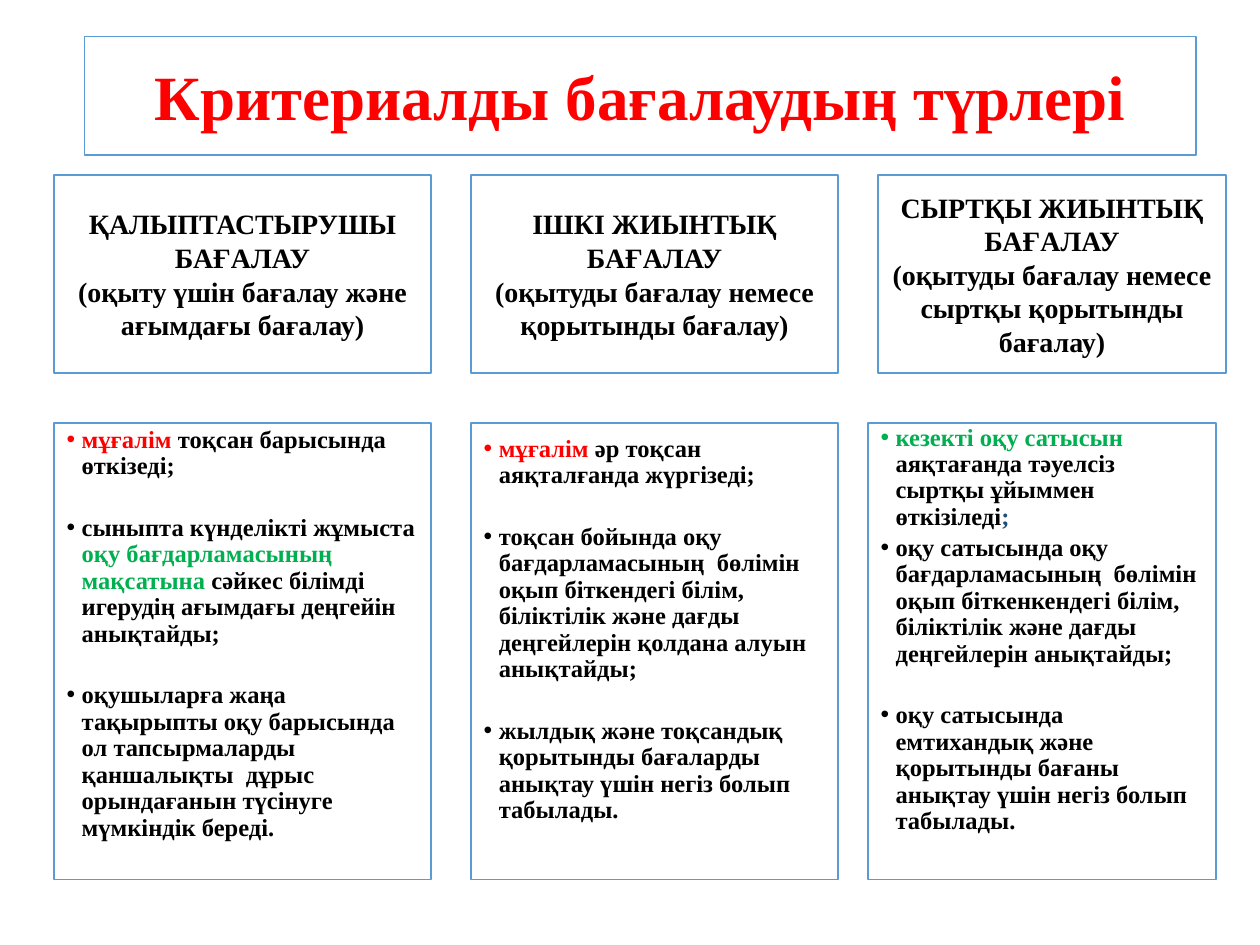
import pptx
import pptx.util
import pptx.oxml
import pptx.oxml.ns
import pptx.dml.color
import pptx.enum.shapes
import pptx.enum.text

Inches = pptx.util.Inches
Pt = pptx.util.Pt
ALIGN = pptx.enum.text.PP_ALIGN
SHAPE = pptx.enum.shapes.MSO_SHAPE

COLORS = {
    "white": "FFFFFF",
    "border": "5B9BD5",
    "text": "000000",
    "red": "FF0000",
    "green": "00B050",
    "navy": "1F4E79",
}
FONT = "Times New Roman"
WIDE_GAP, NARROW_GAP = 20, 2.5  # points after a list item

HEAD_TOP, HEAD_HEIGHT = 1.39, 1.57
LIST_TOP, LIST_HEIGHT = 3.36, 3.62

# Each column: head left, list left, width, room below the list, head, items.
# Each item: gap after it and its (text, colour) spans.
COLUMNS = [
    (0.43, 0.43, 2.99, 0.32,
     ["ҚАЛЫПТАСТЫРУШЫ БАҒАЛАУ", "(оқыту үшін бағалау және ағымдағы бағалау)"],
     [(WIDE_GAP, [("мұғалім ", "red"), ("тоқсан барысында өткізеді;", "text")]),
      (WIDE_GAP, [("сыныпта күнделікті жұмыста ", "text"),
                  ("оқу бағдарламасының мақсатына ", "green"),
                  ("сәйкес білімді игерудің ағымдағы деңгейін анықтайды;", "text")]),
      (0, [("оқушыларға жаңа тақырыпты оқу барысында ол тапсырмаларды "
            "қаншалықты  дұрыс орындағанын түсінуге мүмкіндік береді.", "text")])]),
    (3.74, 3.74, 2.91, 0.39,
     ["ІШКІ ЖИЫНТЫҚ БАҒАЛАУ", "(оқытуды бағалау немесе қорытынды бағалау)"],
     [(WIDE_GAP, [("мұғалім", "red"), (" әр тоқсан аяқталғанда жүргізеді;", "text")]),
      (WIDE_GAP, [("тоқсан бойында оқу бағдарламасының  бөлімін  оқып біткендегі "
                   "білім, біліктілік және дағды деңгейлерін қолдана алуын "
                   "анықтайды;", "text")]),
      (0, [("жылдық және тоқсандық қорытынды бағаларды анықтау үшін негіз "
            "болып табылады.", "text")])]),
    (6.97, 6.89, 2.76, 0.39,
     ["СЫРТҚЫ ЖИЫНТЫҚ БАҒАЛАУ",
      "(оқытуды бағалау немесе сыртқы қорытынды бағалау)"],
     [(NARROW_GAP, [("кезекті оқу сатысын ", "green"),
                    ("аяқтағанда тәуелсіз сыртқы ұйыммен өткізіледі", "text"),
                    (";", "navy")]),
      (WIDE_GAP, [("оқу сатысында оқу бағдарламасының  бөлімін оқып біткенкендегі "
                   "білім, біліктілік және дағды деңгейлерін анықтайды;", "text")]),
      (0, [("оқу сатысында емтихандық және қорытынды бағаны анықтау үшін негіз "
            "болып табылады.", "text")])]),
]


class PageBuilder:
    """Holds the style and the current slide."""

    def __init__(self, deck):
        self.page = deck.slides.add_slide(deck.slide_layouts[5])

    def color(self, name):
        return pptx.dml.color.RGBColor.from_string(COLORS[name])

    def style_box(self, box):
        box.fill.solid()
        box.fill.fore_color.rgb = self.color("white")
        box.line.color.rgb = self.color("border")
        box.line.width = Pt(1)
        frame = box.text_frame
        frame.word_wrap = True
        frame.auto_size = pptx.enum.text.MSO_AUTO_SIZE.NONE
        frame.vertical_anchor = pptx.enum.text.MSO_ANCHOR.MIDDLE

    def style_span(self, span, size, color):
        span.font.name = FONT
        span.font.size = Pt(size)
        span.font.bold = True
        span.font.color.rgb = self.color(color)

    def center_text(self, box, lines, size, color):
        box.text_frame.text = "\n".join(lines)
        for para in box.text_frame.paragraphs:
            para.alignment = ALIGN.CENTER
            for span in para.runs:
                self.style_span(span, size, color)

    def title(self, text, left, top, width, height):
        box = self.page.shapes.title
        box.left, box.top = Inches(left), Inches(top)
        box.width, box.height = Inches(width), Inches(height)
        # Rounded outline for the title placeholder
        box._element.spPr.append(pptx.oxml.parse_xml(
            f'<a:prstGeom {pptx.oxml.ns.nsdecls("a")} prst="roundRect">'
            '<a:avLst/></a:prstGeom>'))
        self.style_box(box)
        self.center_text(box, [text], 36, color="red")

    def card(self, left, top, width, height):
        box = self.page.shapes.add_shape(
            SHAPE.RECTANGLE, Inches(left), Inches(top), Inches(width), Inches(height))
        box.shadow.inherit = False
        self.style_box(box)
        return box

    def head(self, lines, left, width):
        box = self.card(left, HEAD_TOP, width, HEAD_HEIGHT)
        self.center_text(box, lines, 16, "text")

    def bullet(self, para):
        props = para._p.get_or_add_pPr()
        props.set("marL", str(Inches(0.12)))
        props.set("indent", str(-Inches(0.12)))
        names = pptx.oxml.ns.nsdecls("a")
        props.append(pptx.oxml.parse_xml(f'<a:buFont {names} typeface="Arial"/>'))
        props.append(pptx.oxml.parse_xml(f'<a:buChar {names} char="•"/>'))

    def bullet_list(self, items, left, width, room_below):
        box = self.card(left, LIST_TOP, width, LIST_HEIGHT)
        frame = box.text_frame
        frame.margin_bottom = Inches(room_below)
        for index, (gap, spans) in enumerate(items):
            para = frame.add_paragraph() if index else frame.paragraphs[0]
            para.level = 1
            para.alignment = ALIGN.LEFT
            para.line_spacing = 0.9
            para.space_after = Pt(gap)
            self.bullet(para)
            for text, color in spans:
                span = para.add_run()
                span.text = text
                self.style_span(span, 14, color)


def main():
    deck = pptx.Presentation()
    deck.slide_width, deck.slide_height = Inches(10), Inches(7.5)
    builder = PageBuilder(deck)

    # Title
    builder.title("Критериалды бағалаудың түрлері", 0.67, 0.29, 8.82, 0.94)

    # Three kinds of assessment, each a head above a list
    for head_left, list_left, width, room_below, head, items in COLUMNS:
        builder.head(head, head_left, width)
        builder.bullet_list(items, list_left, width, room_below)

    deck.save("out.pptx")


if __name__ == "__main__":
    main()
